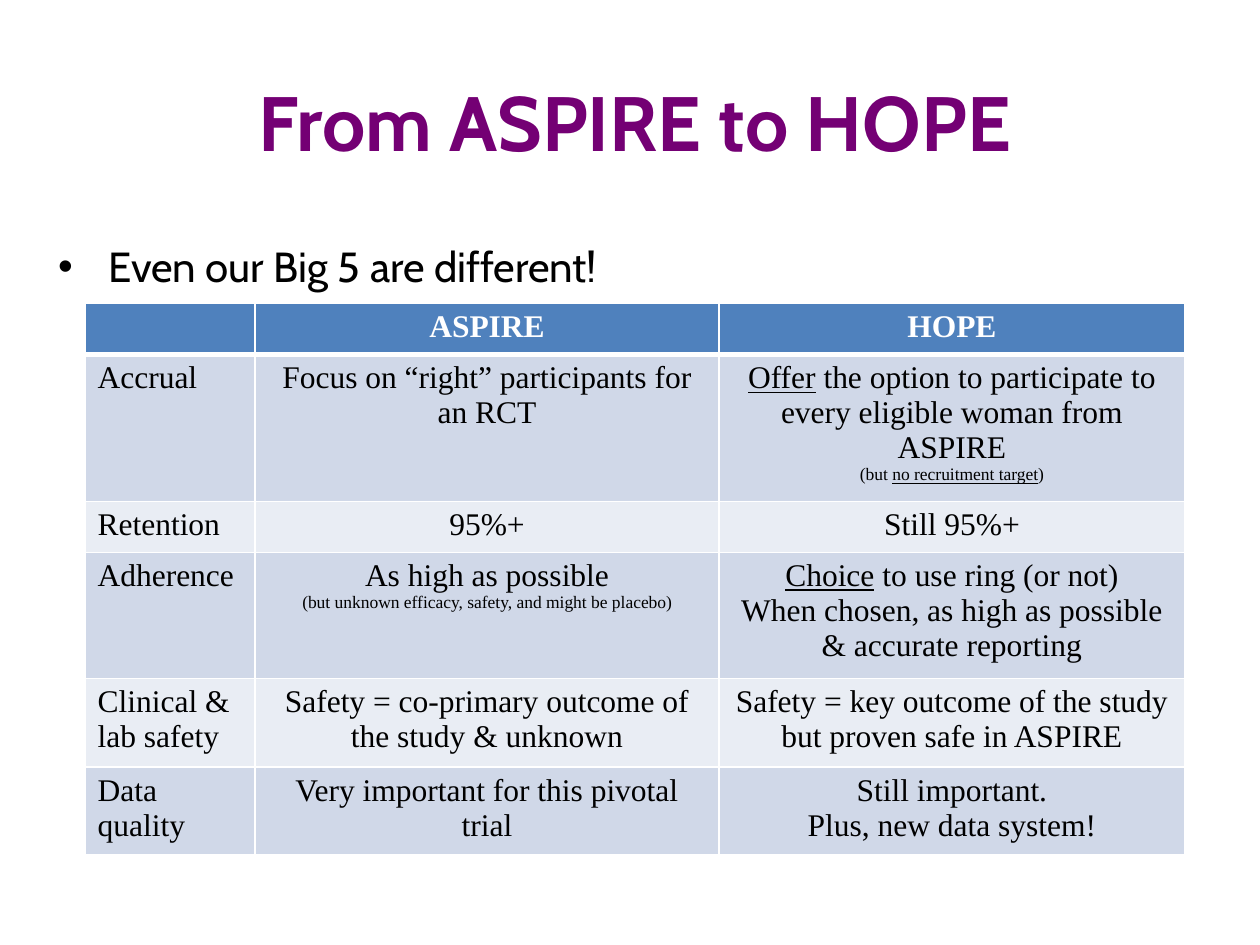
from lxml import etree
from pptx import Presentation
from pptx.dml.color import RGBColor
from pptx.enum.text import MSO_ANCHOR, MSO_AUTO_SIZE, PP_ALIGN
from pptx.oxml.ns import qn
from pptx.util import Pt

LEFT, CENTER = PP_ALIGN.LEFT, PP_ALIGN.CENTER
PURPLE = RGBColor(0x74, 0x00, 0x74)
BLACK = RGBColor(0x00, 0x00, 0x00)
WHITE = RGBColor(0xFF, 0xFF, 0xFF)
BLUE = RGBColor(0x4F, 0x81, 0xBD)
BANDS = RGBColor(0xD0, 0xD8, 0xE8), RGBColor(0xE9, 0xED, 0xF4)

WIDTHS = [97.2, 265, 266.4]
HEIGHTS = [28.6, 84, 29, 72, 50.8, 50]

# A cell is a list of paragraphs; a paragraph is a list of (text, format) runs.
SMALL = {"size": 10}
LINE = {"under": True}
ROWS = [
    [[], [[("ASPIRE", {})]], [[("HOPE", {})]]],
    [
        [[("Accrual", {})]],
        [[("Focus on “right” participants for an RCT", {})]],
        [
            [("Offer", LINE),
             (" the option to participate to every eligible woman from ASPIRE", {})],
            [("(but ", SMALL), ("no recruitment target", SMALL | LINE), (")", SMALL)],
        ],
    ],
    [[[("Retention", {})]], [[("95%+", {})]], [[("Still 95%+", {})]]],
    [
        [[("Adherence", {})]],
        [
            [("As high as possible", {})],
            [("(but unknown efficacy, safety, and might be placebo)", SMALL)],
        ],
        [
            [("Choice", LINE), (" to use ring (or not)", {})],
            [("When chosen, as high as possible & accurate reporting", {})],
        ],
    ],
    [
        [[("Clinical & lab safety", {})]],
        [[("Safety = co-primary outcome of the study & unknown", {})]],
        [[("Safety = key outcome of the study but proven safe in ASPIRE", {})]],
    ],
    [
        [[("Data quality", {})]],
        [[("Very important for this pivotal trial", {})]],
        [[("Still important.", {})], [("Plus, new data system!", {})]],
    ],
]


def add_text(para, text, font="Times New Roman", size=18, color=BLACK,
             bold=False, under=False):
    run = para.add_run()
    run.text = text
    run.font.name = font
    run.font.size = Pt(size)
    run.font.color.rgb = color
    run.font.bold = bold
    run.font.underline = under


def place(shape, left, top, width, height):
    shape.left, shape.top = Pt(left), Pt(top)
    shape.width, shape.height = Pt(width), Pt(height)


def add_title(slide):
    title = slide.shapes.title
    place(title, 30, 24, 666, 90)
    title.text_frame.vertical_anchor = MSO_ANCHOR.MIDDLE
    para = title.text_frame.paragraphs[0]
    para.alignment = CENTER
    add_text(para, "From ASPIRE to HOPE", font="Cabin", size=44,
             color=PURPLE, bold=True)


def add_body(slide):
    body = slide.placeholders[1]
    place(body, 26, 134, 678, 54)
    body.text_frame.auto_size = MSO_AUTO_SIZE.NONE
    para = body.text_frame.paragraphs[0]
    props = para._p.get_or_add_pPr()
    props.set("marL", str(Pt(28.8)))
    props.set("indent", str(Pt(-28.8)))
    etree.SubElement(props, qn("a:buChar")).set("char", "•")
    add_text(para, "Even our Big 5 are different!", font="Cabin", size=24)


def set_edges(cell, base):
    """Draw white cell borders, with the bottom one base points wide."""
    props = cell._tc.get_or_add_tcPr()
    for spot, (side, width) in enumerate(
            [("lnL", 1), ("lnR", 1), ("lnT", 1), ("lnB", base)]):
        edge = etree.Element(qn(f"a:{side}"), w=str(Pt(width)))
        fill = etree.SubElement(edge, qn("a:solidFill"))
        etree.SubElement(fill, qn("a:srgbClr")).set("val", str(WHITE))
        props.insert(spot, edge)


def fill_cell(cell, paras, row, col):
    head = row == 0
    cell.fill.solid()
    cell.fill.fore_color.rgb = BLUE if head else BANDS[(row - 1) % 2]
    set_edges(cell, 3 if head else 1)
    base = {"color": WHITE, "bold": True} if head else {}
    frame = cell.text_frame
    for spot, runs in enumerate(paras):
        para = frame.add_paragraph() if spot else frame.paragraphs[0]
        para.alignment = CENTER if col else LEFT
        for text, style in runs:
            add_text(para, text, **(base | style))


def add_grid(slide):
    table = slide.shapes.add_table(
        len(ROWS), len(WIDTHS), Pt(48.6), Pt(173.4),
        Pt(sum(WIDTHS)), Pt(sum(HEIGHTS))).table
    for col, width in zip(table.columns, WIDTHS):
        col.width = Pt(width)
    for row, height in zip(table.rows, HEIGHTS):
        row.height = Pt(height)
    for r, cells in enumerate(ROWS):
        for c, paras in enumerate(cells):
            fill_cell(table.cell(r, c), paras, r, c)


def main():
    deck = Presentation()
    deck.slide_width, deck.slide_height = Pt(720), Pt(540)
    slide = deck.slides.add_slide(deck.slide_layouts[1])
    add_title(slide)
    add_body(slide)
    add_grid(slide)
    deck.save("out.pptx")


if __name__ == "__main__":
    main()
